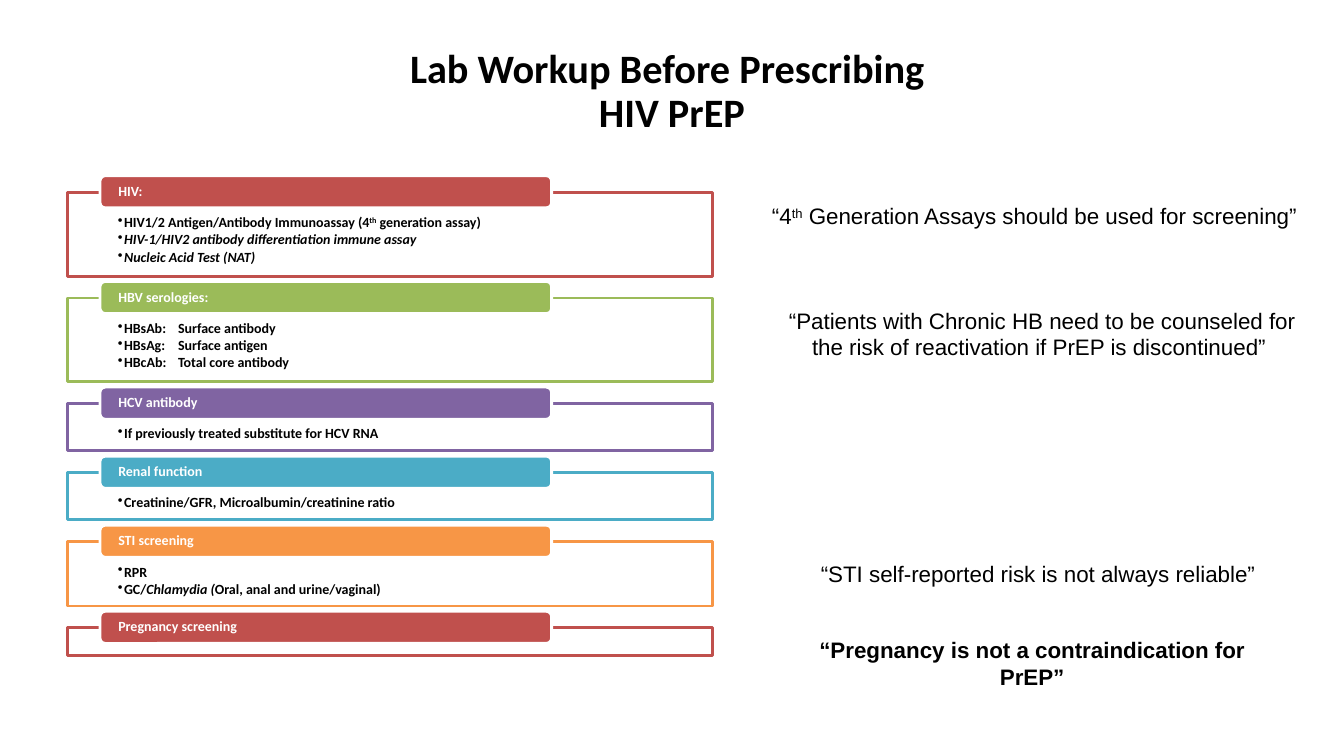
from pptx import Presentation
from pptx.dml.color import RGBColor
from pptx.enum.shapes import MSO_SHAPE as Shape
from pptx.enum.text import MSO_ANCHOR as Anchor, PP_ALIGN as Align
from pptx.oxml.ns import qn
from pptx.util import Pt
from lxml.etree import SubElement

RED = RGBColor(0xC0, 0x50, 0x4D)
GREEN = RGBColor(0x9B, 0xBB, 0x59)
PURPLE = RGBColor(0x80, 0x64, 0xA2)
TEAL = RGBColor(0x4B, 0xAC, 0xC6)
ORANGE = RGBColor(0xF7, 0x96, 0x46)
BLACK = RGBColor(0, 0, 0)
WHITE = RGBColor(255, 255, 255)

# Content: each line is a list of (text, style) parts
TITLE = [("Lab Workup Before Prescribing \vHIV PrEP", "")]
TESTS = [  # heading, colour, box height, lines
    ("HIV:", RED, 60, [
        [("HIV1/2 Antigen/Antibody Immunoassay (4", ""), ("th", "super"),
         (" generation assay)", "")],
        [("HIV-1/HIV2 antibody differentiation immune assay", "italic")],
        [("Nucleic Acid Test (NAT)", "italic")]]),
    ("HBV serologies:", GREEN, 60, [
        [("HBsAb:\tSurface antibody", "")],
        [("HBsAg:\tSurface antigen", "")],
        [("HBcAb:\tTotal core antibody", "")]]),
    ("HCV antibody", PURPLE, 33.8, [
        [("If previously treated substitute for HCV RNA", "")]]),
    ("Renal function", TEAL, 33.8, [
        [("Creatinine/GFR, Microalbumin/creatinine ratio", "")]]),
    ("STI screening", ORANGE, 46, [
        [("RPR", "")],
        [("GC/", ""), ("Chlamydia (", "italic"),
         ("Oral, anal and urine/vaginal)", "")]]),
    ("Pregnancy screening", RED, 20, []),
]
NOTES = [  # left, top, width, height, alignment, bold, parts
    (544.3, 141.1, 400.3, 26.6, Align.LEFT, False,
     [("“4", ""), ("th", "super"),
      (" Generation Assays should be used for screening”", "")]),
    (544.3, 215.5, 400.3, 46, Align.CENTER, False,
     [("“Patients with Chronic HB need to be counseled for the risk of "
       "reactivation if PrEP is discontinued” ", "")]),
    (561.6, 396.7, 364.3, 26.6, Align.CENTER, False,
     [("“STI self-reported risk is not always reliable” ", "")]),
    (574.6, 450.7, 325.4, 46, Align.CENTER, True,
     [("“Pregnancy is not a contraindication for PrEP”", "")]),
]

# Layout of the test boxes
LEFT, TOP, WIDTH, GAP = 48.2, 137.3, 460.8, 15.5
TAB_LEFT, TAB_RISE, TAB_WIDTH, TAB_HEIGHT = 71.4, 11.8, 322.6, 23


def write(para, parts, size, color, bold=False, face="Calibri"):
    font = para.font
    font.size, font.name, font.bold = Pt(size), face, bold
    font.color.rgb = color
    for text, style in parts:
        for num, piece in enumerate(text.split("\v")):
            if num:
                para.add_line_break()
            run = para.add_run()
            run.text = piece
            if style == "italic":
                run.font.italic = True
            if style == "super":
                run._r.get_or_add_rPr().set("baseline", "30000")


def bullet(para):
    props = para._p.get_or_add_pPr()
    props.set("marL", str(Pt(4.5)))
    props.set("indent", str(-Pt(4.5)))
    sign = SubElement(props, qn("a:buChar"))
    sign.set("char", "•")
    tabs = SubElement(props, qn("a:tabLst"))
    stop = SubElement(tabs, qn("a:tab"))
    stop.set("pos", str(Pt(43)))
    stop.set("algn", "l")


def inset(frame, side, top, bottom):
    frame.word_wrap = True
    frame.margin_left = frame.margin_right = Pt(side)
    frame.margin_top, frame.margin_bottom = Pt(top), Pt(bottom)


def add_box(slide, kind, place, fill, line):
    box = slide.shapes.add_shape(kind, *map(Pt, place))
    box.shadow.inherit = False
    box.fill.solid()
    box.fill.fore_color.rgb = fill
    box.line.color.rgb = line
    box.line.width = Pt(2)
    return box


def add_test(slide, top, head, color, height, lines):
    box = add_box(slide, Shape.RECTANGLE, (LEFT, top, WIDTH, height),
                  WHITE, color)
    if lines:
        frame = box.text_frame
        inset(frame, 36, 16.6, 5.7)
        frame.vertical_anchor = Anchor.TOP
        for num, parts in enumerate(lines):
            para = frame.add_paragraph() if num else frame.paragraphs[0]
            para.alignment = Align.LEFT
            para.line_spacing, para.space_after = 0.9, Pt(1.5)
            bullet(para)
            write(para, parts, 10, BLACK, True)
    tab = add_box(slide, Shape.ROUNDED_RECTANGLE,
                  (TAB_LEFT, top - TAB_RISE, TAB_WIDTH, TAB_HEIGHT),
                  color, WHITE)
    inset(tab.text_frame, 12, 0, 0)
    tab.text_frame.vertical_anchor = Anchor.MIDDLE
    para = tab.text_frame.paragraphs[0]
    para.alignment, para.line_spacing = Align.LEFT, 0.9
    write(para, [(head, "")], 10, WHITE, True)


def add_text(slide, place, align):
    frame = slide.shapes.add_textbox(*map(Pt, place)).text_frame
    frame.word_wrap = True
    frame.paragraphs[0].alignment = align
    return frame


def main():
    deck = Presentation()
    deck.slide_width, deck.slide_height = Pt(960), Pt(540)
    slide = deck.slides.add_slide(deck.slide_layouts[6])

    # Title
    frame = add_text(slide, (48, 21, 864, 90), Align.CENTER)
    frame.vertical_anchor = Anchor.MIDDLE
    frame.paragraphs[0].line_spacing = 0.9
    write(frame.paragraphs[0], TITLE, 28.8, BLACK, True)

    # Test boxes, stacked with equal gaps
    top = TOP
    for head, color, height, lines in TESTS:
        add_test(slide, top, head, color, height, lines)
        top += height + GAP

    # Notes on the right
    for *place, align, bold, parts in NOTES:
        frame = add_text(slide, place, align)
        write(frame.paragraphs[0], parts, 16, BLACK, bold, "Arial")

    deck.save("out.pptx")


if __name__ == "__main__":
    main()
